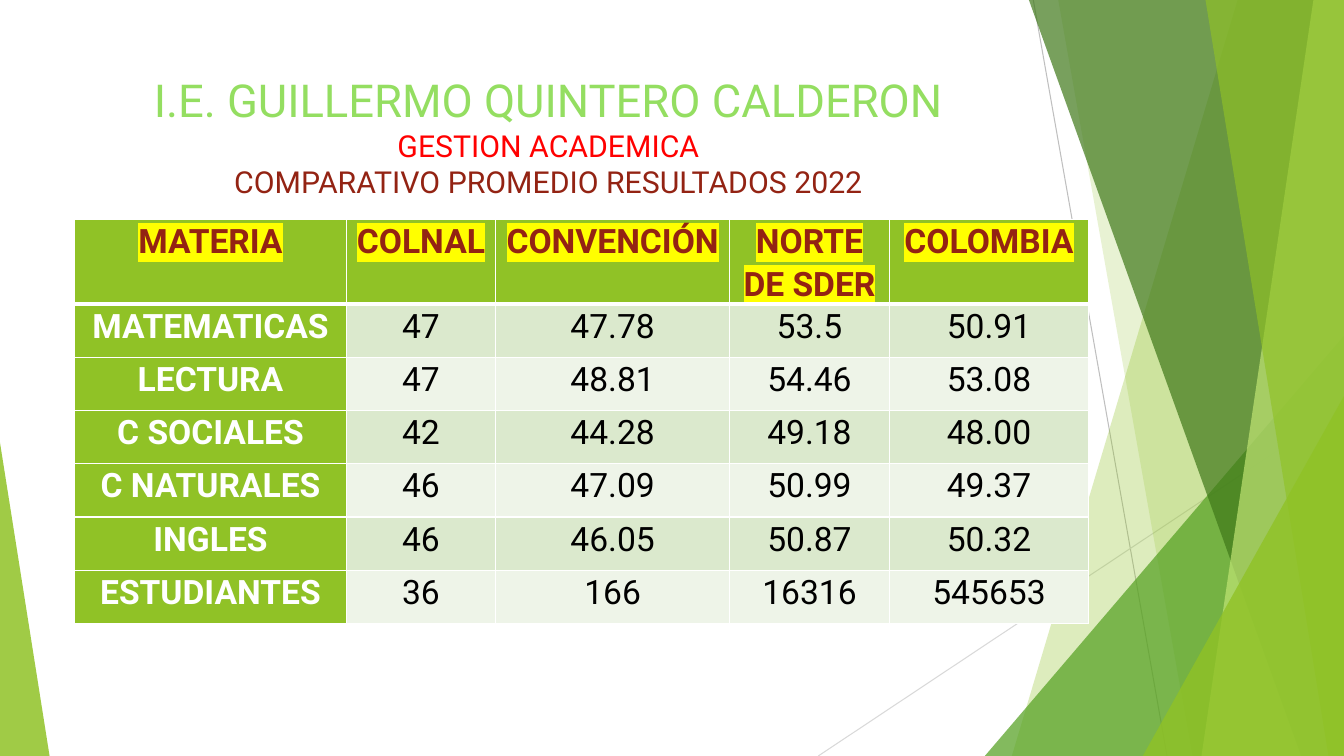
from lxml import etree
from pptx import Presentation
from pptx.dml.color import RGBColor
from pptx.enum.shapes import MSO_CONNECTOR, MSO_SHAPE
from pptx.enum.text import MSO_ANCHOR, MSO_AUTO_SIZE, PP_ALIGN
from pptx.oxml.ns import qn
from pptx.util import Cm, Pt

STRAIGHT = MSO_CONNECTOR.STRAIGHT
TRIANGLE = MSO_SHAPE.ISOSCELES_TRIANGLE
TOP = MSO_ANCHOR.TOP
CENTER = PP_ALIGN.CENTER

WHITE = RGBColor(0xFF, 0xFF, 0xFF)
BLACK = RGBColor(0x00, 0x00, 0x00)
YELLOW = RGBColor(0xFF, 0xFF, 0x00)
RED = RGBColor(0xFF, 0x00, 0x00)
BROWN = RGBColor(0x93, 0x23, 0x13)
LIGHT_GREEN = RGBColor(0x94, 0xDE, 0x61)
LIME = RGBColor(0x90, 0xC2, 0x26)
PALE_LIME = RGBColor(0xC0, 0xE4, 0x74)
GREEN = RGBColor(0x54, 0xA0, 0x21)
DARK_GREEN = RGBColor(0x3F, 0x78, 0x19)
BANDS = (RGBColor(0xDB, 0xE9, 0xCD), RGBColor(0xEE, 0xF4, 0xE8))
GRAY = RGBColor(0xBF, 0xBF, 0xBF)
LIGHT_GRAY = RGBColor(0xD9, 0xD9, 0xD9)

FONT = "Roboto"
WIDTH, HEIGHT = 33.87, 19.05  # cm, as are all lengths below

# Content
TITLE_LINES = [
    ("I.E. GUILLERMO QUINTERO CALDERON", 32.4, LIGHT_GREEN),
    ("GESTION ACADEMICA", 21.6, RED),
    ("COMPARATIVO PROMEDIO RESULTADOS 2022", 21.6, BROWN),
]
RESULTS = [
    ("MATERIA", "COLNAL", "CONVENCIÓN", "NORTE DE SDER", "COLOMBIA"),
    ("MATEMATICAS", "47", "47.78", "53.5", "50.91"),
    ("LECTURA", "47", "48.81", "54.46", "53.08"),
    ("C SOCIALES", "42", "44.28", "49.18", "48.00"),
    ("C NATURALES", "46", "47.09", "50.99", "49.37"),
    ("INGLES", "46", "46.05", "50.87", "50.32"),
    ("ESTUDIANTES", "36", "166", "16316", "545653"),
]
COLUMN_WIDTHS = (6.85, 3.76, 5.9, 4.02, 5.03)
HEADER_HEIGHT, ROW_HEIGHT = 2.12, 1.34
LEFT, TITLE_TOP, TABLE_TOP = 1.88, 1.7, 5.54
TITLE_WIDTH = 23.88

# Background: thin lines, then facets from back to front
RAYS = [
    ((26.04, 0), (29.41, HEIGHT), GRAY),
    ((WIDTH, 10.24), (20.62, HEIGHT), LIGHT_GRAY),
]
# Panels run to the right edge: (top left x, bottom left x, colour, opacity %)
# Wedges stand on the bottom edge: (left, width, height, apex, colour, opacity %)
FACETS = [
    (31.19, 25.5, LIME, 30),
    (26.67, 30.05, LIME, 20),
    (24.82, 9.05, 10.59, 1, GREEN, 72),
    (25.93, 32.79, DARK_GREEN, 70),
    (33.1, 30.28, PALE_LIME, 70),
    (30.38, 33.48, LIME, 65),
    (28.8, 5.07, 9.07, 1, LIME, 80),
    (0, 1.25, 7.9, 0, LIME, 85),
]


def add_text(paragraph, text, size=24, color=BLACK, bold=False, highlight=None):
    paragraph.alignment = CENTER
    run = paragraph.add_run()
    run.text = text
    run.font.name, run.font.size, run.font.bold = FONT, Pt(size), bold
    run.font.color.rgb = color
    if highlight is not None:
        mark = etree.Element(qn("a:highlight"))
        etree.SubElement(mark, qn("a:srgbClr"), val=str(highlight))
        run.font._element.find(qn("a:solidFill")).addnext(mark)


def add_panel(shapes, top_x, bottom_x):
    corners = [(top_x, 0), (WIDTH, 0), (WIDTH, HEIGHT), (bottom_x, HEIGHT)]
    points = [(Cm(x), Cm(y)) for x, y in corners]
    builder = shapes.build_freeform(*points[0])
    builder.add_line_segments(points[1:], close=True)
    return builder.convert_to_shape()


def add_wedge(shapes, left, width, height, apex):
    wedge = shapes.add_shape(
        TRIANGLE, Cm(left), Cm(HEIGHT - height), Cm(width), Cm(height))
    wedge.adjustments[0] = apex
    return wedge


def paint(facet, color, opacity):
    facet.shadow.inherit = False
    facet.fill.solid()
    facet.fill.fore_color.rgb = color
    facet.line.fill.background()
    srgb = facet._element.spPr.find(f"{qn('a:solidFill')}/{qn('a:srgbClr')}")
    etree.SubElement(srgb, qn("a:alpha"), val=str(opacity * 1000))


def add_borders(cell, bottom):
    for index, (side, width) in enumerate(
            (("lnL", 1), ("lnR", 1), ("lnT", 1), ("lnB", bottom))):
        border = etree.Element(qn(f"a:{side}"), w=str(Pt(width)))
        fill = etree.SubElement(border, qn("a:solidFill"))
        etree.SubElement(fill, qn("a:srgbClr"), val=str(WHITE))
        cell._tc.get_or_add_tcPr().insert(index, border)


def add_background(shapes):
    for start, end, color in RAYS:
        ray = shapes.add_connector(STRAIGHT, *(Cm(v) for v in start + end))
        ray.line.color.rgb = color
        ray.line.width = Pt(0.75)
        etree.SubElement(ray._element.spPr, qn("a:effectLst"))
    for *geometry, color, opacity in FACETS:
        add_facet = add_panel if len(geometry) == 2 else add_wedge
        paint(add_facet(shapes, *geometry), color, opacity)


def fill_title(title):
    title.left, title.top = Cm(LEFT), Cm(TITLE_TOP)
    title.width, title.height = Cm(TITLE_WIDTH), Cm(TABLE_TOP - TITLE_TOP)
    frame = title.text_frame
    frame.word_wrap = True
    frame.auto_size = MSO_AUTO_SIZE.NONE
    frame.vertical_anchor = TOP
    for index, (text, size, color) in enumerate(TITLE_LINES):
        paragraph = frame.add_paragraph() if index else frame.paragraphs[0]
        add_text(paragraph, text, size=size, color=color)


def add_results(shapes):
    heights = [HEADER_HEIGHT] + [ROW_HEIGHT] * (len(RESULTS) - 1)
    results = shapes.add_table(
        len(RESULTS), len(COLUMN_WIDTHS), Cm(LEFT), Cm(TABLE_TOP),
        Cm(sum(COLUMN_WIDTHS)), Cm(sum(heights))).table
    results.first_col = True
    for column, width in zip(results.columns, COLUMN_WIDTHS):
        column.width = Cm(width)
    for r, values in enumerate(RESULTS):
        results.rows[r].height = Cm(heights[r])
        for c, value in enumerate(values):
            cell = results.cell(r, c)
            cell.margin_left = cell.margin_right = Cm(0.18)
            cell.margin_top = cell.margin_bottom = 0
            cell.vertical_anchor = TOP
            is_label = r == 0 or c == 0
            cell.fill.solid()
            cell.fill.fore_color.rgb = LIME if is_label else BANDS[(r - 1) % 2]
            add_borders(cell, bottom=3 if r == 0 else 1)
            paragraph = cell.text_frame.paragraphs[0]
            paragraph.line_spacing = 1.07
            if r == 0:
                add_text(paragraph, value, color=BROWN, bold=True, highlight=YELLOW)
            else:
                add_text(paragraph, value, color=WHITE if is_label else BLACK,
                         bold=is_label)


def main():
    deck = Presentation()
    deck.slide_width, deck.slide_height = Cm(WIDTH), Cm(HEIGHT)
    slide = deck.slides.add_slide(deck.slide_layouts[5])
    add_background(slide.shapes)
    title = slide.shapes.title
    fill_title(title)
    slide.shapes._spTree.append(title._element)  # in front of the facets
    add_results(slide.shapes)
    deck.save("out.pptx")


if __name__ == "__main__":
    main()
